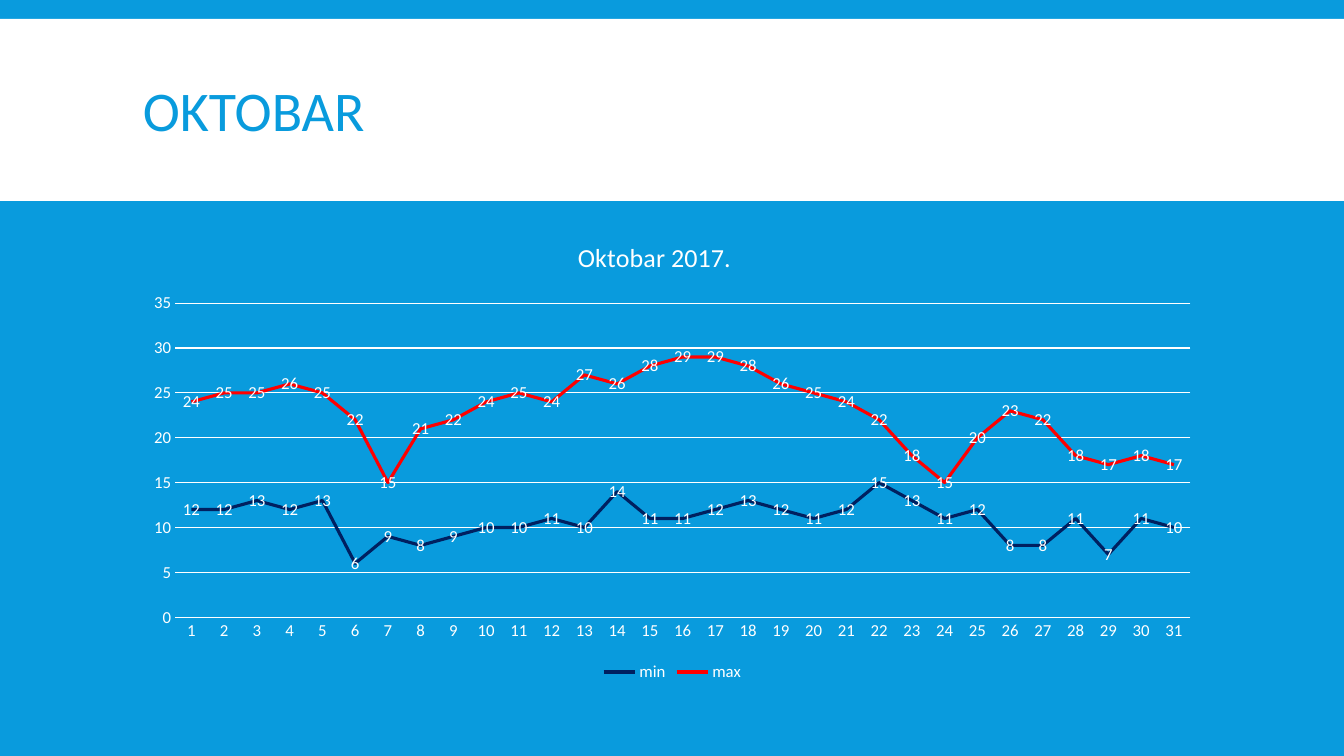
from dataclasses import dataclass

from lxml import etree
from pptx import Presentation
from pptx import util as u
from pptx.chart.data import CategoryChartData
from pptx.dml.color import RGBColor
from pptx.enum import chart as charts, shapes, text
from pptx.oxml import parse_xml
from pptx.oxml.ns import nsdecls, qn


@dataclass(frozen=True)
class Theme:
    font: str = "Calibri"
    blue: str = "099BDD"
    white: str = "FFFFFF"
    navy: str = "002060"
    red: str = "FF0000"
    heading: float = 40
    chart_title: float = 18.6
    label: float = 12
    grid_line: float = 0.75
    series_line: float = 2.25


PX = u.Inches(1) / 100.8
PAGE = (1344, 756)
BAND = (0, 19, 1344, 182)
HEADING = (133, 31, 1079, 166)
CHART = (133, 222, 1079, 464)
PLOT = (175, 303, 1015, 314)
CHART_TITLE = (573, 234)

MIN_TEMPS = [12, 12, 13, 12, 13, 6, 9, 8, 9, 10, 10, 11, 10, 14, 11, 11,
             12, 13, 12, 11, 12, 15, 13, 11, 12, 8, 8, 11, 7, 11, 10]
MAX_TEMPS = [24, 25, 25, 26, 25, 22, 15, 21, 22, 24, 25, 24, 27, 26, 28, 29,
             29, 28, 26, 25, 24, 22, 18, 15, 20, 23, 22, 18, 17, 18, 17]


def emu(*lengths):
    return [u.Emu(round(length * PX)) for length in lengths]


class Slide:
    def __init__(self, deck, theme):
        self.theme = theme
        self.page = deck.slides.add_slide(deck.slide_layouts[6])
        self.paint(self.page.background.fill, theme.blue)

    def paint(self, fill, color):
        fill.solid()
        fill.fore_color.rgb = RGBColor.from_string(color)

    def style_font(self, font, size, color):
        font.name = self.theme.font
        font.size = u.Pt(size)
        font.bold = False
        font.color.rgb = RGBColor.from_string(color)

    def style_line(self, line, width, color):
        line.width = u.Pt(width)
        self.paint(line.fill, color)

    def band(self, place, color):
        box = self.page.shapes.add_shape(shapes.MSO_SHAPE.RECTANGLE, *emu(*place))
        box.shadow.inherit = False
        self.paint(box.fill, color)
        box.line.fill.background()

    def heading(self, place, words):
        frame = self.page.shapes.add_textbox(*emu(*place)).text_frame
        frame.word_wrap = True
        frame.vertical_anchor = text.MSO_ANCHOR.MIDDLE
        para = frame.paragraphs[0]
        para.line_spacing = 0.85
        span = para.add_run()
        span.text = words
        self.style_font(span.font, self.theme.heading, self.theme.blue)

    def line_chart(self, place, title, days, series):
        data = CategoryChartData(number_format="General")
        data.categories = days
        for name, values, _ in series:
            data.add_series(name, values)
        chart = self.page.shapes.add_chart(
            charts.XL_CHART_TYPE.LINE, *emu(*place), data).chart
        self.style_font(chart.font, self.theme.label, self.theme.white)

        # Title and legend
        span = chart.chart_title.text_frame.paragraphs[0].add_run()
        span.text = title
        self.style_font(span.font, self.theme.chart_title, self.theme.white)
        chart.chart_title.include_in_layout = False
        chart.has_legend = True
        chart.legend.position = charts.XL_LEGEND_POSITION.BOTTOM
        chart.legend.include_in_layout = False
        self.style_font(chart.legend.font, self.theme.label, self.theme.white)

        # Axes
        for axis in (chart.category_axis, chart.value_axis):
            axis.major_tick_mark = charts.XL_TICK_MARK.NONE
            axis.minor_tick_mark = charts.XL_TICK_MARK.NONE
            self.style_font(axis.tick_labels.font, self.theme.label, self.theme.white)
        self.style_line(chart.category_axis.format.line,
                        self.theme.grid_line, self.theme.white)
        scale = chart.value_axis
        scale.format.line.fill.background()
        scale.minimum_scale, scale.maximum_scale, scale.major_unit = 0, 35, 5
        scale.has_major_gridlines = True
        self.style_line(scale.major_gridlines.format.line,
                        self.theme.grid_line, self.theme.white)

        # Series and their labels
        plot = chart.plots[0]
        plot.vary_by_categories = False
        for line, (_, _, color) in zip(plot.series, series):
            line.smooth = False
            line.marker.style = charts.XL_MARKER_STYLE.NONE
            self.style_line(line.format.line, self.theme.series_line, color)
            labels = line.data_labels
            labels.show_value = True
            labels.position = charts.XL_LABEL_POSITION.CENTER
            self.style_font(labels.font, self.theme.label, self.theme.white)
        return chart

    def arrange(self, element, chart_place, place, inner=False):
        """Set a fixed layout, as fractions of the chart, on a chart part."""
        left, top, width, height = chart_place
        fractions = [(place[0] - left) / width, (place[1] - top) / height]
        fractions += [size / whole for size, whole in zip(place[2:], (width, height))]
        layout = parse_xml(f"<c:layout {nsdecls('c')}><c:manualLayout/></c:layout>")
        settings = [("layoutTarget", "inner")] if inner else []
        settings += [("xMode", "edge"), ("yMode", "edge")]
        settings += [(key, f"{part:.3f}") for key, part in zip("xywh", fractions)]
        for key, value in settings:
            etree.SubElement(layout[0], qn(f"c:{key}")).set("val", value)
        for old in element.findall(qn("c:layout")):
            element.remove(old)
        rich = element.find(qn("c:tx"))
        if rich is None:
            element.insert(0, layout)
        else:
            rich.addnext(layout)


def main():
    theme = Theme()
    deck = Presentation()
    deck.slide_width, deck.slide_height = emu(*PAGE)
    slide = Slide(deck, theme)

    # Heading band
    slide.band(BAND, theme.white)
    slide.heading(HEADING, "OKTOBAR")

    # Daily temperatures
    days = [str(day) for day in range(1, 32)]
    series = [("min", MIN_TEMPS, theme.navy), ("max", MAX_TEMPS, theme.red)]
    chart = slide.line_chart(CHART, "Oktobar 2017.", days, series)
    root = chart.element if hasattr(chart, "element") else chart.plots[0]._element.getroottree().getroot()
    slide.arrange(root.find(".//" + qn("c:plotArea")), CHART, PLOT, inner=True)
    slide.arrange(root.find(".//" + qn("c:title")), CHART, CHART_TITLE)

    deck.save("out.pptx")


if __name__ == "__main__":
    main()
